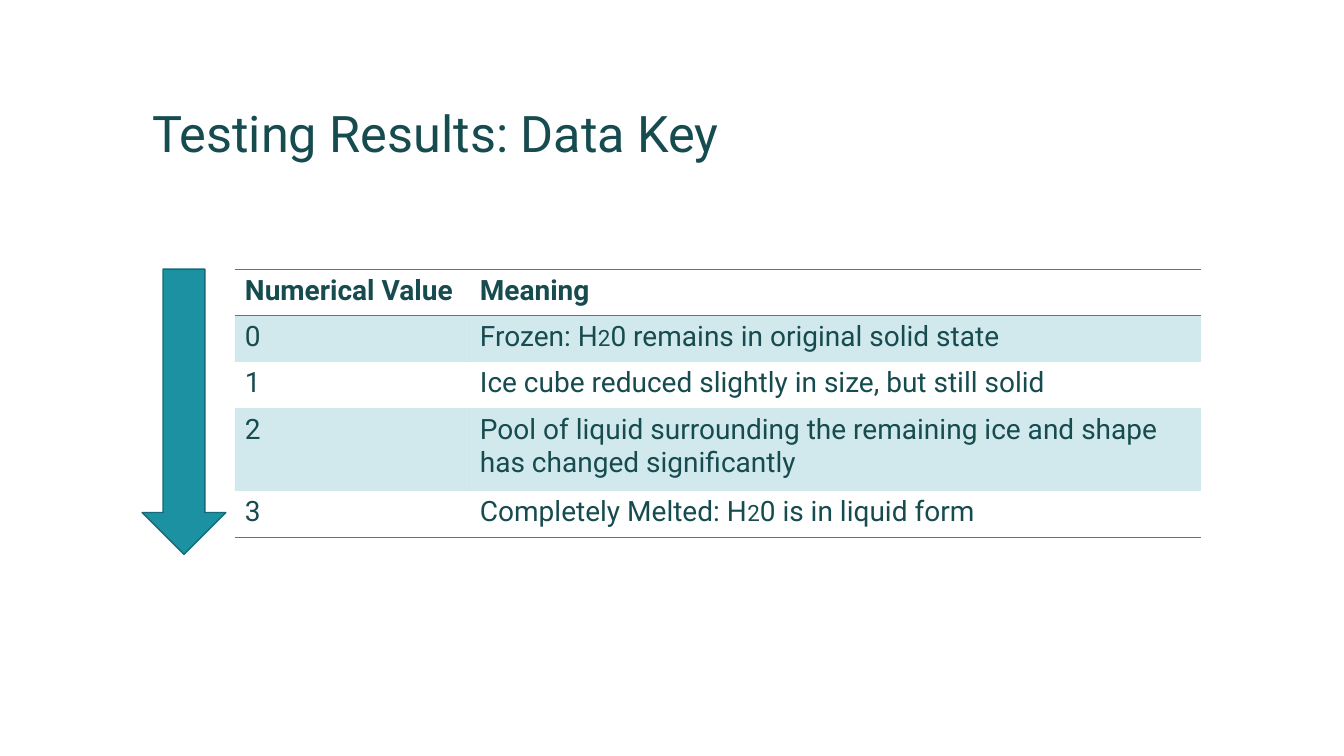
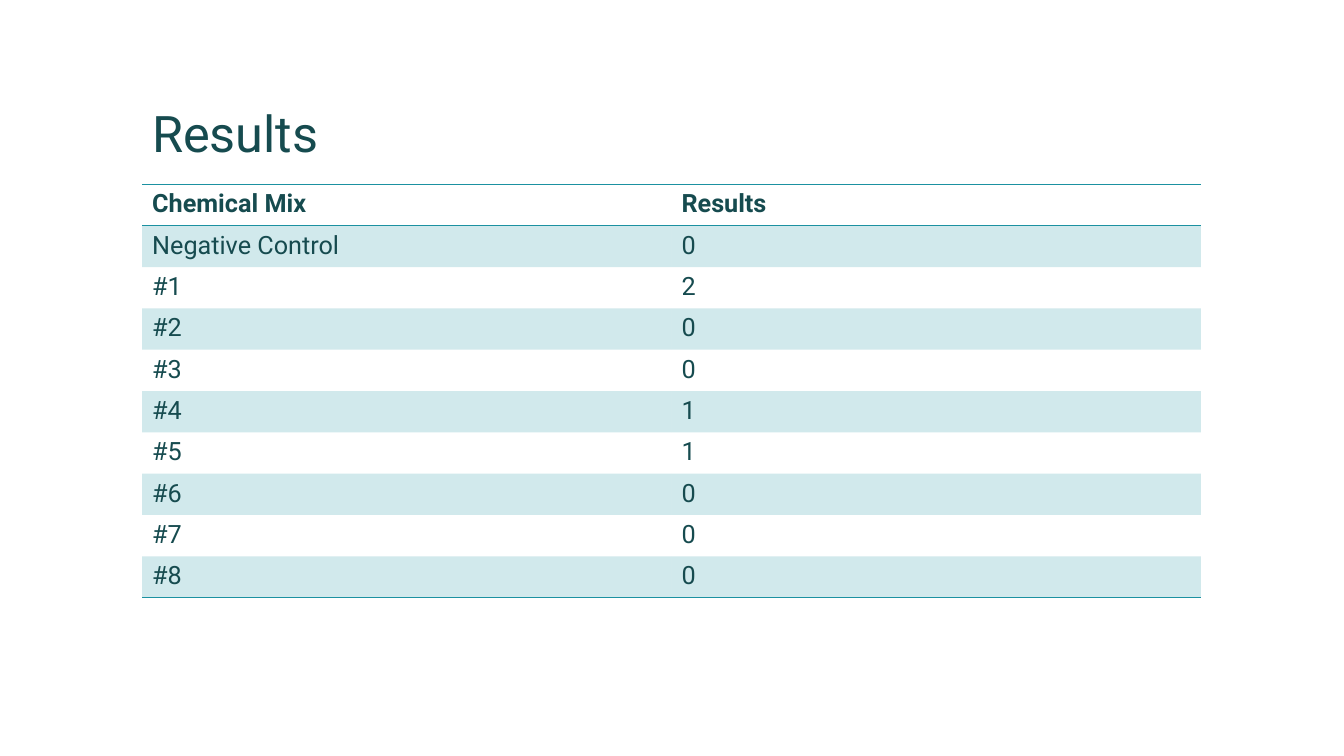
from lxml import etree
from pptx import Presentation
from pptx.dml.color import RGBColor
from pptx.enum.shapes import MSO_SHAPE
from pptx.enum.text import MSO_ANCHOR
from pptx.oxml.ns import qn
from pptx.util import Inches, Pt

DOWN_ARROW = MSO_SHAPE.DOWN_ARROW
BOTTOM = MSO_ANCHOR.BOTTOM
FONT = "Roboto"
INK, TEAL, DARK_TEAL = "164B4F", "1B91A1", "146B77"
NO_GRID_STYLE = "{2D5ABB26-0587-4C30-8999-92F81FD0307C}"
LEFT, WIDTH = 1.41, 10.5


def rgb(value):
    return RGBColor.from_string(value)


def set_font(font, size, bold=False):
    font.name, font.size, font.bold = FONT, Pt(size), bold
    font.color.rgb = rgb(INK)


def add_border(cell, side):
    """Draw a thin teal rule; borders must precede the fill in the cell."""
    tc_pr = cell._tc.get_or_add_tcPr()
    ln = etree.Element(qn(f"a:{side}"), w=str(Pt(1)))
    fill = etree.SubElement(ln, qn("a:solidFill"))
    etree.SubElement(fill, qn("a:srgbClr"), val=TEAL)
    tc_pr.insert(0, ln)


def tint(cell):
    """Fill a cell with teal at 20% opacity."""
    cell.fill.solid()
    cell.fill.fore_color.rgb = rgb(TEAL)
    for color in cell._tc.tcPr.iter(qn("a:srgbClr")):
        etree.SubElement(color, qn("a:alpha"), val="20000")


class Deck:
    def __init__(self):
        self.prs = Presentation()
        self.prs.slide_width, self.prs.slide_height = Inches(13.33), Inches(7.5)
        self.s = None

    def slide(self, title):
        self.s = self.prs.slides.add_slide(self.prs.slide_layouts[6])
        box = self.s.shapes.add_textbox(Inches(LEFT), Inches(0.42), Inches(WIDTH), Inches(1.25))
        tf = box.text_frame
        tf.word_wrap, tf.vertical_anchor = True, BOTTOM
        p = tf.paragraphs[0]
        p.text, p.line_spacing = title, 0.9
        set_font(p.font, 36)

    def cell_text(self, cell, content, size, bold):
        """Write text; in a tuple, every second piece is a smaller digit."""
        p = cell.text_frame.paragraphs[0]
        set_font(p.font, size, bold)
        if isinstance(content, str):
            p.text = content
            return
        for i, piece in enumerate(content):
            r = p.add_run()
            r.text = piece
            set_font(r.font, size - 4 * (i % 2))

    def table(self, left, top, col_widths, row_heights, rows, size):
        frame = self.s.shapes.add_table(
            len(rows), len(col_widths), Inches(left), Inches(top),
            Inches(sum(col_widths)), Inches(sum(row_heights)))
        for style in frame.element.iter(qn("a:tableStyleId")):
            style.text = NO_GRID_STYLE
        table = frame.table
        table.horz_banding = False
        for col, width in zip(table.columns, col_widths):
            col.width = Inches(width)
        for i, (row, height, contents) in enumerate(zip(table.rows, row_heights, rows)):
            row.height = Inches(height)
            for cell, content in zip(row.cells, contents):
                self.cell_text(cell, content, size, bold=i == 0)
                if i % 2:
                    tint(cell)
                else:
                    cell.fill.background()
                if i in (0, len(rows) - 1):
                    add_border(cell, "lnB")
                if i == 0:
                    add_border(cell, "lnT")

    def down_arrow(self, left, top, width, height):
        sp = self.s.shapes.add_shape(
            DOWN_ARROW, Inches(left), Inches(top), Inches(width), Inches(height))
        sp.shadow.inherit = False
        sp.fill.solid()
        sp.fill.fore_color.rgb = rgb(TEAL)
        sp.line.color.rgb = rgb(DARK_TEAL)
        sp.line.width = Pt(1)


def main():
    deck = Deck()

    # Data key with the melting scale
    deck.slide("Testing Results: Data Key")
    key = [
        ("Numerical Value", "Meaning"),
        ("0", ("Frozen: H", "2", "0 remains in original solid state")),
        ("1", "Ice cube reduced slightly in size, but still solid"),
        ("2", "Pool of liquid surrounding the remaining ice and shape has changed significantly"),
        ("3", ("Completely Melted: H", "2", "0 is in liquid form")),
    ]
    deck.table(2.33, 2.67, [2.33, 7.25], [0.46, 0.46, 0.46, 0.82, 0.46], key, 20)
    deck.down_arrow(LEFT, 2.67, 0.83, 2.83)

    # Results per chemical mix
    deck.slide("Results")
    results = [("Chemical Mix", "Results"), ("Negative Control", "0")]
    results += [(f"#{n}", value) for n, value in enumerate("20011000", 1)]
    deck.table(LEFT, 1.83, [WIDTH / 2] * 2, [0.41] * len(results), results, 18)

    deck.prs.save("out.pptx")


if __name__ == "__main__":
    main()
